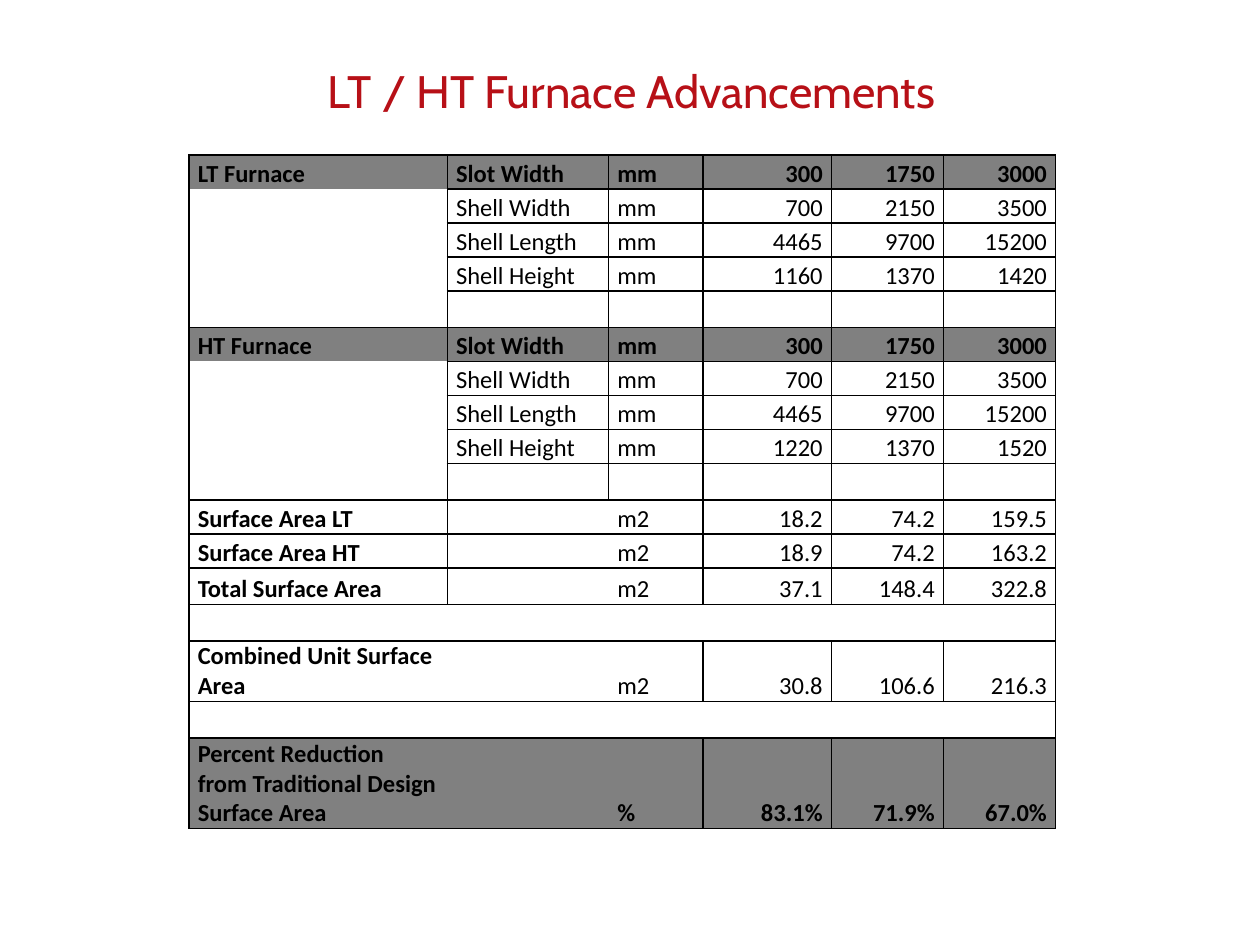
from lxml.etree import SubElement
from pptx import Presentation
from pptx.dml.color import RGBColor
from pptx.enum.text import MSO_ANCHOR, MSO_AUTO_SIZE, PP_ALIGN
from pptx.oxml.ns import qn
from pptx.util import Inches, Pt

RED = RGBColor(0xB7, 0x10, 0x17)
BLACK = RGBColor(0, 0, 0)
GRAY = RGBColor(0x80, 0x80, 0x80)

WIDTHS = [2.05, 1.28, 0.75, 1.02, 0.89, 0.89]
ALL = "LRTB"
HEAD = ["LTR"] + [ALL] * 5
BODY = ["LR"] + [ALL] * 5
LAST = ["LRB"] + [ALL] * 5
AREA = [ALL, "LTB", "TRB"] + [ALL] * 3
WIDE = ["LTB", "TB", "TRB"] + [ALL] * 3
SPAN = ["LTB"] + ["TB"] * 4 + ["TRB"]
BLANK = [""] * 6


def block(name, heights):
    """Return the rows for one furnace as height, borders and texts."""
    return [
        (0.27, HEAD, [name, "Slot Width", "mm", "300", "1750", "3000"]),
        (0.27, BODY, ["", "Shell Width", "mm", "700", "2150", "3500"]),
        (0.27, BODY, ["", "Shell Length", "mm", "4465", "9700", "15200"]),
        (0.27, BODY, ["", "Shell Height", "mm"] + heights),
        (0.29, LAST, BLANK),
    ]


ROWS = [
    *block("LT Furnace", ["1160", "1370", "1420"]),
    *block("HT Furnace", ["1220", "1370", "1520"]),
    (0.27, AREA, ["Surface Area LT", "", "m2", "18.2", "74.2", "159.5"]),
    (0.27, AREA, ["Surface Area HT", "", "m2", "18.9", "74.2", "163.2"]),
    (0.29, AREA, ["Total Surface Area", "", "m2", "37.1", "148.4", "322.8"]),
    (0.29, SPAN, BLANK),
    (0.48, WIDE, ["Combined Unit Surface Area", "", "m2", "30.8", "106.6", "216.3"]),
    (0.29, SPAN, BLANK),
    (0.72, WIDE, ["Percent Reduction from Traditional Design Surface Area", "", "%",
                  "83.1%", "71.9%", "67.0%"]),
]


def set_font(para, name, size, color, bold=False):
    """Set the font of a paragraph."""
    font = para.font
    font.name, font.size, font.bold = name, Pt(size), bold
    font.color.rgb = color


def add_title(slide):
    """Place and format the slide title."""
    title = slide.shapes.title
    title.left, title.top = Inches(2.36), Inches(0.5)
    title.width, title.height = Inches(5.31), Inches(0.49)
    frame = title.text_frame
    frame.text = "LT / HT Furnace Advancements"
    frame.word_wrap = False
    frame.auto_size = MSO_AUTO_SIZE.SHAPE_TO_FIT_TEXT
    para = frame.paragraphs[0]
    para.alignment = PP_ALIGN.CENTER
    para.line_spacing = 0.9
    set_font(para, "Cabin", 26, RED)


def set_edges(cell, sides):
    """Draw the named sides of a cell and clear the others."""
    props = cell._tc.get_or_add_tcPr()
    for side in ALL:
        line = SubElement(props, qn("a:ln" + side), w=str(Pt(1)))
        if side in sides:
            fill = SubElement(line, qn("a:solidFill"))
            SubElement(fill, qn("a:srgbClr"), val=str(BLACK))
        else:
            SubElement(line, qn("a:noFill"))


def fill_cell(cell, text, sides, shade, bold, right):
    """Write and format one table cell."""
    set_edges(cell, sides)
    if shade:
        cell.fill.solid()
        cell.fill.fore_color.rgb = GRAY
    else:
        cell.fill.background()
    cell.margin_left = cell.margin_right = Inches(0.07)
    cell.margin_top = cell.margin_bottom = 0
    cell.vertical_anchor = MSO_ANCHOR.BOTTOM
    para = cell.text_frame.paragraphs[0]
    para.alignment = PP_ALIGN.RIGHT if right else PP_ALIGN.LEFT
    set_font(para, "Calibri", 14, BLACK, bold)
    if text:
        para.add_run().text = text
    else:
        SubElement(para._p, qn("a:endParaRPr"), sz="1400")


def add_grid(slide):
    """Add the table of furnace sizes and surface areas."""
    frame = slide.shapes.add_table(len(ROWS), len(WIDTHS), Inches(1.5), Inches(1.23),
                                   Inches(6.88), Inches(5.37))
    table = frame.table
    table.first_row = table.horz_banding = False
    for col, width in zip(table.columns, WIDTHS):
        col.width = Inches(width)
    for i, (height, edges, texts) in enumerate(ROWS):
        table.rows[i].height = Inches(height)
        shade = edges is HEAD or i == len(ROWS) - 1
        for j, (text, sides) in enumerate(zip(texts, edges)):
            fill_cell(table.cell(i, j), text, sides, shade, shade or j == 0, j > 2)


def main():
    """Build and save the slide."""
    deck = Presentation()
    deck.slide_width, deck.slide_height = Inches(10), Inches(7.5)
    slide = deck.slides.add_slide(deck.slide_layouts[5])
    add_title(slide)
    add_grid(slide)
    deck.save("out.pptx")


if __name__ == "__main__":
    main()
